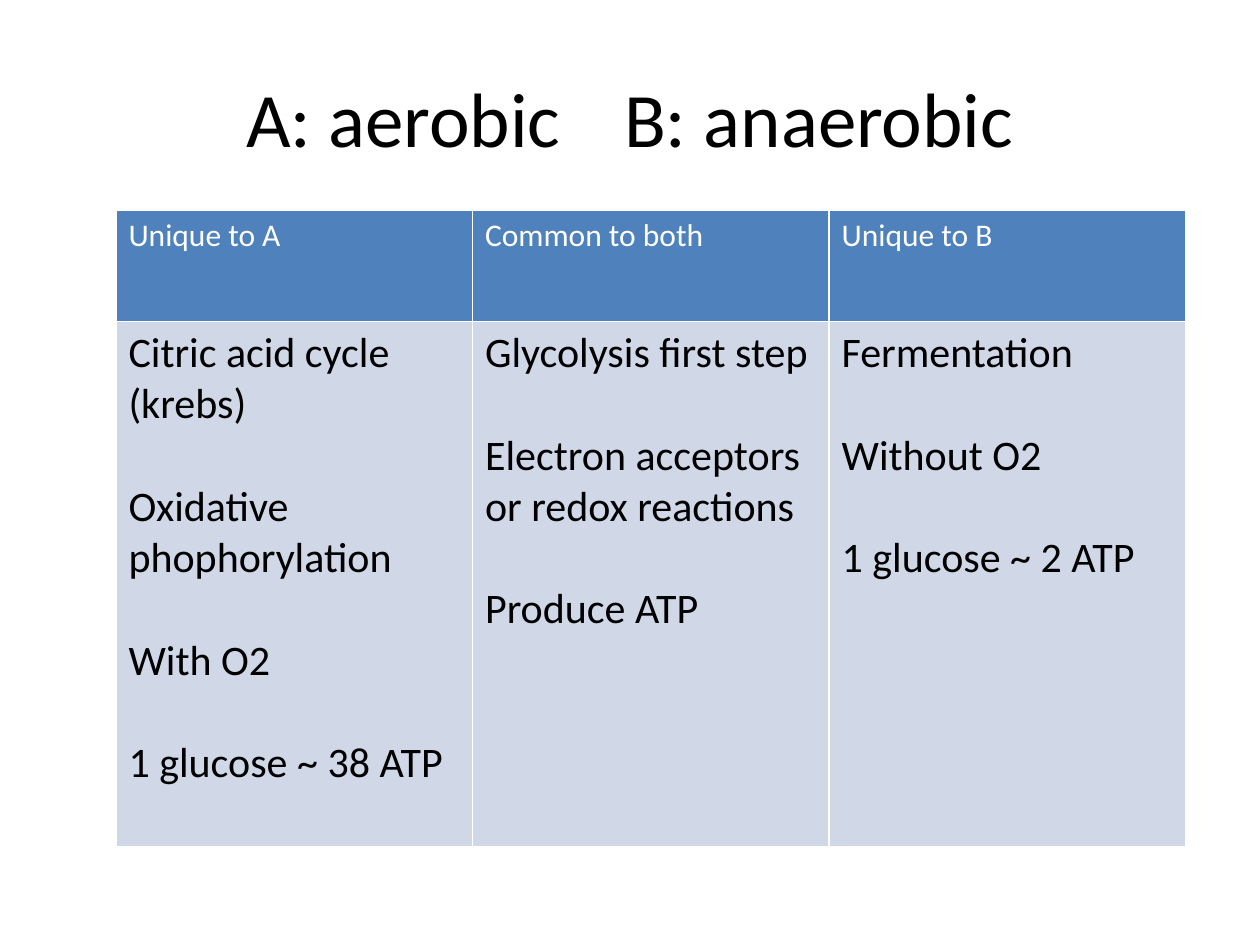
"""Builds a slide comparing aerobic and anaerobic respiration."""
from dataclasses import dataclass

import lxml.etree
import pptx
import pptx.dml.color
import pptx.enum.text
import pptx.oxml.ns
import pptx.util

Inches = pptx.util.Inches
Pt = pptx.util.Pt


@dataclass(frozen=True)
class Theme:
    font: str = "Calibri"
    title_size: float = 44
    header_size: float = 18
    body_size: float = 24
    body_gap: float = 29.3
    border_width: float = 1
    dark: str = "000000"
    light: str = "FFFFFF"
    header_fill: str = "4F81BD"
    body_fill: str = "D0D8E8"


class SlideBuilder:
    def __init__(self, presentation, theme):
        self.theme = theme
        self.slide = presentation.slides.add_slide(presentation.slide_layouts[5])

    def add_run(self, paragraph, text, size, color):
        run = paragraph.add_run()
        run.text = text
        run.font.name = self.theme.font
        run.font.size = Pt(size)
        run.font.bold = False
        run.font.color.rgb = pptx.dml.color.RGBColor.from_string(color)

    def add_title(self, text, left, top, width, height):
        title = self.slide.shapes.title
        title.left, title.top = Inches(left), Inches(top)
        title.width, title.height = Inches(width), Inches(height)
        title.text_frame.vertical_anchor = pptx.enum.text.MSO_ANCHOR.MIDDLE
        paragraph = title.text_frame.paragraphs[0]
        paragraph.alignment = pptx.enum.text.PP_ALIGN.CENTER
        self.add_run(paragraph, text, self.theme.title_size, self.theme.dark)

    def add_borders(self, cell):
        qn = pptx.oxml.ns.qn
        properties = cell._tc.get_or_add_tcPr()
        for side in ("lnL", "lnR", "lnT", "lnB"):
            line = lxml.etree.SubElement(
                properties, qn(f"a:{side}"), w=str(Pt(self.theme.border_width)))
            fill = lxml.etree.SubElement(line, qn("a:solidFill"))
            lxml.etree.SubElement(fill, qn("a:srgbClr"), val=self.theme.light)

    def fill_cell(self, cell, lines, size, color, fill):
        self.add_borders(cell)
        cell.fill.solid()
        cell.fill.fore_color.rgb = pptx.dml.color.RGBColor.from_string(fill)
        frame = cell.text_frame
        for index, line in enumerate(lines):
            paragraph = frame.add_paragraph() if index else frame.paragraphs[0]
            if index:
                paragraph.space_before = Pt(self.theme.body_gap)
            self.add_run(paragraph, line, size, color)

    def add_comparison(self, columns, left, top, column_width, row_heights):
        theme = self.theme
        table = self.slide.shapes.add_table(
            len(row_heights), len(columns), Inches(left), Inches(top),
            Inches(column_width * len(columns)), Inches(sum(row_heights))).table
        for row, height in zip(table.rows, row_heights):
            row.height = Inches(height)
        for index, (heading, points) in enumerate(columns.items()):
            table.columns[index].width = Inches(column_width)
            self.fill_cell(table.cell(0, index), [heading],
                           theme.header_size, theme.light, theme.header_fill)
            self.fill_cell(table.cell(1, index), points,
                           theme.body_size, theme.dark, theme.body_fill)


def main():
    presentation = pptx.Presentation()
    presentation.slide_width = Inches(10)
    presentation.slide_height = Inches(7.5)
    builder = SlideBuilder(presentation, Theme())
    builder.add_title("A: aerobic \tB: anaerobic", 0.5, 0.3, 9, 1.25)
    columns = {
        "Unique to A": ["Citric acid cycle (krebs)", "Oxidative phophorylation",
                        "With O2", "1 glucose ~ 38 ATP"],
        "Common to both": ["Glycolysis first step",
                           "Electron acceptors or redox reactions", "Produce ATP"],
        "Unique to B": ["Fermentation", "Without O2", "1 glucose ~ 2 ATP"],
    }
    builder.add_comparison(columns, 0.92, 1.67, 2.83, [0.88, 4.17])
    presentation.save("out.pptx")


if __name__ == "__main__":
    main()
